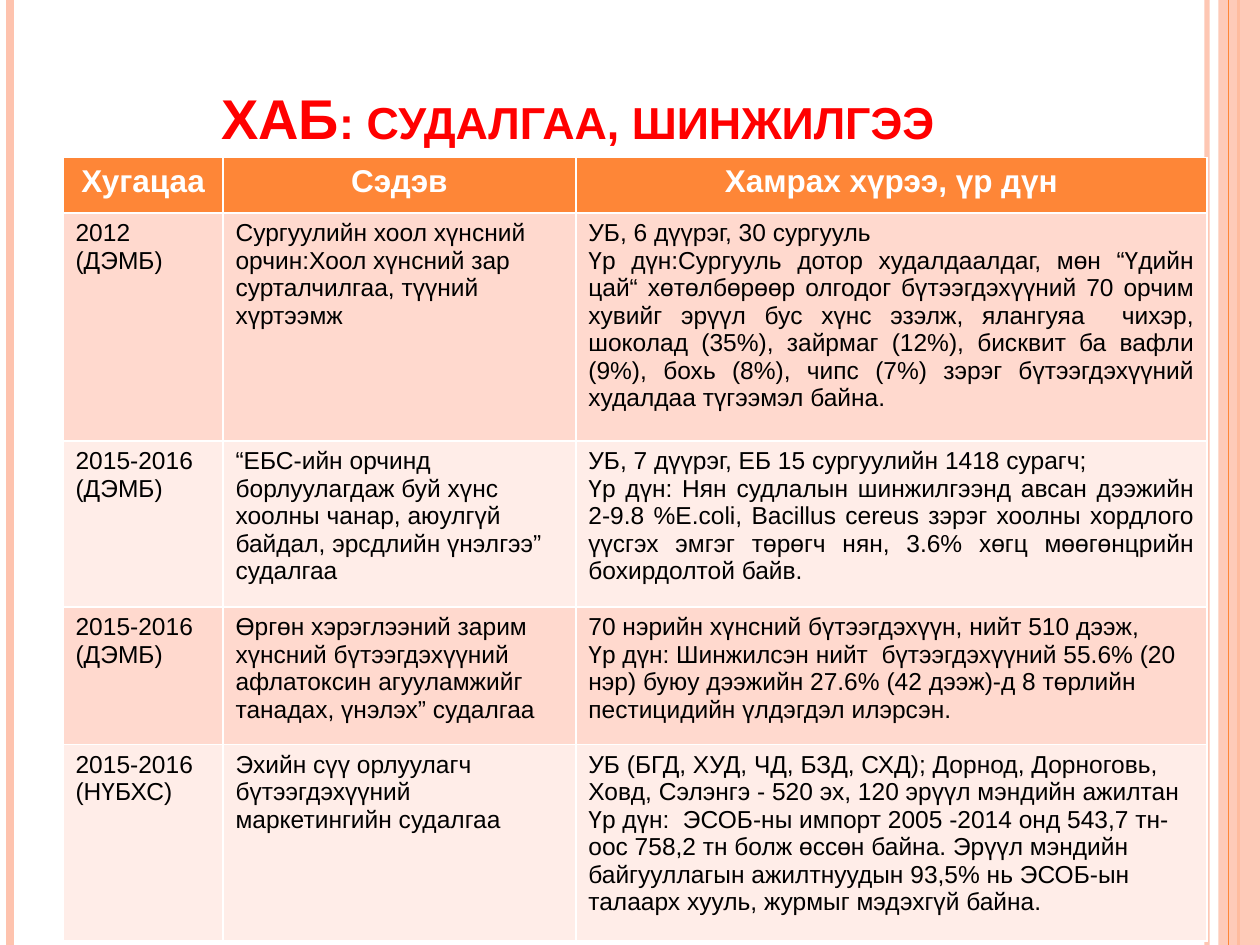
from pptx import Presentation
from pptx.dml.color import RGBColor
from pptx.enum.shapes import MSO_CONNECTOR, MSO_SHAPE
from pptx.enum.text import MSO_ANCHOR, PP_ALIGN
from pptx.oxml.ns import qn
from pptx.util import Inches, Pt
from lxml.etree import SubElement

ORANGE, PEACH = "FE8637", "FEC3AE"
BAND_COLORS = ["FFD9CE", "FFEDE8"]


def set_color(color, value, opacity=100):
    color.rgb = RGBColor.from_string(value)
    if opacity < 100:
        srgb = color._xFill.find(qn("a:srgbClr"))
        SubElement(srgb, qn("a:alpha")).set("val", str(opacity * 1000))


def add_stripe(x, color, width, opacity=100):
    """Draw a full-height vertical line."""
    stripe = slide.shapes.add_connector(
        MSO_CONNECTOR.STRAIGHT, Inches(x), 0, Inches(x), presentation.slide_height)
    stripe.line.width = Pt(width)
    stripe.line.fill.solid()
    set_color(stripe.line.fill.fore_color, color, opacity)
    SubElement(stripe._element.spPr, qn("a:effectLst"))


presentation = Presentation()
presentation.slide_width, presentation.slide_height = Inches(10), Inches(7.5)
slide = presentation.slides.add_slide(presentation.slide_layouts[5])
title = slide.shapes.title

# Edge decoration
add_stripe(9.58, PEACH, 3, opacity=93)
add_stripe(0.08, PEACH, 4.5)
add_stripe(9.83, ORANGE, 1.5)
side_band = slide.shapes.add_shape(
    MSO_SHAPE.RECTANGLE, Inches(9.67), 0, Inches(0.33), presentation.slide_height)
side_band.shadow.inherit = False
side_band.line.fill.background()
side_band.fill.solid()
set_color(side_band.fill.fore_color, PEACH, opacity=87)
add_stripe(9.75, ORANGE, 0.75)

# Title
title.left, title.top = Inches(0.5), Inches(0.3)
title.width, title.height = Inches(8.17), Inches(0.95)
title.text_frame.vertical_anchor = MSO_ANCHOR.BOTTOM
paragraph = title.text_frame.paragraphs[0]
paragraph.alignment = PP_ALIGN.CENTER
run = paragraph.add_run()
run.text = "ХАБ: судалгаа, шинжилгээ"
run.font.name, run.font.size, run.font.bold = "Arial", Pt(32), True
set_color(run.font.color, "FF0000")
run.font._element.set("cap", "small")

# Table of studies: period, topic, coverage and results
rows = [
    ["Хугацаа", "Сэдэв", "Хамрах хүрээ, үр дүн"],
    ["2012\n(ДЭМБ)",
     "Сургуулийн хоол хүнсний орчин:Хоол хүнсний зар сурталчилгаа, түүний хүртээмж",
     "УБ, 6 дүүрэг, 30 сургууль\n"
     "Үр дүн:Сургууль дотор худалдаалдаг, мөн “Үдийн цай“ хөтөлбөрөөр олгодог "
     "бүтээгдэхүүний 70 орчим хувийг эрүүл бус хүнс эзэлж, ялангуяа  чихэр, "
     "шоколад (35%), зайрмаг (12%), бисквит ба вафли (9%), бохь (8%), чипс (7%) "
     "зэрэг бүтээгдэхүүний худалдаа түгээмэл байна."],
    ["2015-2016\n(ДЭМБ)",
     "“ЕБС-ийн орчинд борлуулагдаж буй хүнс хоолны чанар, аюулгүй байдал, "
     "эрсдлийн үнэлгээ” судалгаа",
     "УБ, 7 дүүрэг, ЕБ 15 сургуулийн 1418 сурагч;\n"
     "Үр дүн: Нян судлалын шинжилгээнд авсан дээжийн 2-9.8 %E.coli, Bacillus "
     "cereus зэрэг хоолны хордлого үүсгэх эмгэг төрөгч нян, 3.6% хөгц "
     "мөөгөнцрийн бохирдолтой байв."],
    ["2015-2016\n(ДЭМБ)",
     "Өргөн хэрэглээний зарим хүнсний бүтээгдэхүүний афлатоксин агууламжийг "
     "танадах, үнэлэх” судалгаа",
     "70 нэрийн хүнсний бүтээгдэхүүн, нийт 510 дээж,\n"
     "Үр дүн: Шинжилсэн нийт  бүтээгдэхүүний 55.6% (20 нэр) буюу дээжийн 27.6% "
     "(42 дээж)-д 8 төрлийн пестицидийн үлдэгдэл илэрсэн."],
    ["2015-2016\n(НҮБХС)",
     "Эхийн сүү орлуулагч бүтээгдэхүүний маркетингийн судалгаа",
     "УБ (БГД, ХУД, ЧД, БЗД, СХД); Дорнод, Дорноговь, Ховд, Сэлэнгэ - 520 эх, "
     "120 эрүүл мэндийн ажилтан\n"
     "Үр дүн:  ЭСОБ-ны импорт 2005 -2014 онд 543,7 тн-оос 758,2 тн болж өссөн "
     "байна. Эрүүл мэндийн байгууллагын ажилтнуудын 93,5% нь ЭСОБ-ын талаарх "
     "хууль, журмыг мэдэхгүй байна."],
]
column_widths = [1.27, 2.8, 5.01]
row_heights = [0.44, 1.81, 1.32, 1.09, 1.56]
justified_rows = (1, 2)

table = slide.shapes.add_table(
    len(rows), len(column_widths), Inches(0.5), Inches(1.25),
    Inches(sum(column_widths)), Inches(sum(row_heights))).table
for column, width in zip(table.columns, column_widths):
    column.width = Inches(width)
for i, (texts, height) in enumerate(zip(rows, row_heights)):
    table.rows[i].height = Inches(height)
    is_header = i == 0
    for j, text in enumerate(texts):
        cell = table.cell(i, j)
        cell.text = text
        cell.fill.solid()
        set_color(cell.fill.fore_color, ORANGE if is_header else BAND_COLORS[(i - 1) % 2])
        for paragraph in cell.text_frame.paragraphs:
            font = paragraph.font
            font.name, font.bold = "Arial", is_header
            font.size = Pt(18 if is_header else 14)
            set_color(font.color, "FFFFFF" if is_header else "000000")
            if is_header:
                paragraph.alignment = PP_ALIGN.CENTER
            elif j == 2 and i in justified_rows:
                paragraph.alignment = PP_ALIGN.JUSTIFY

presentation.save("out.pptx")
